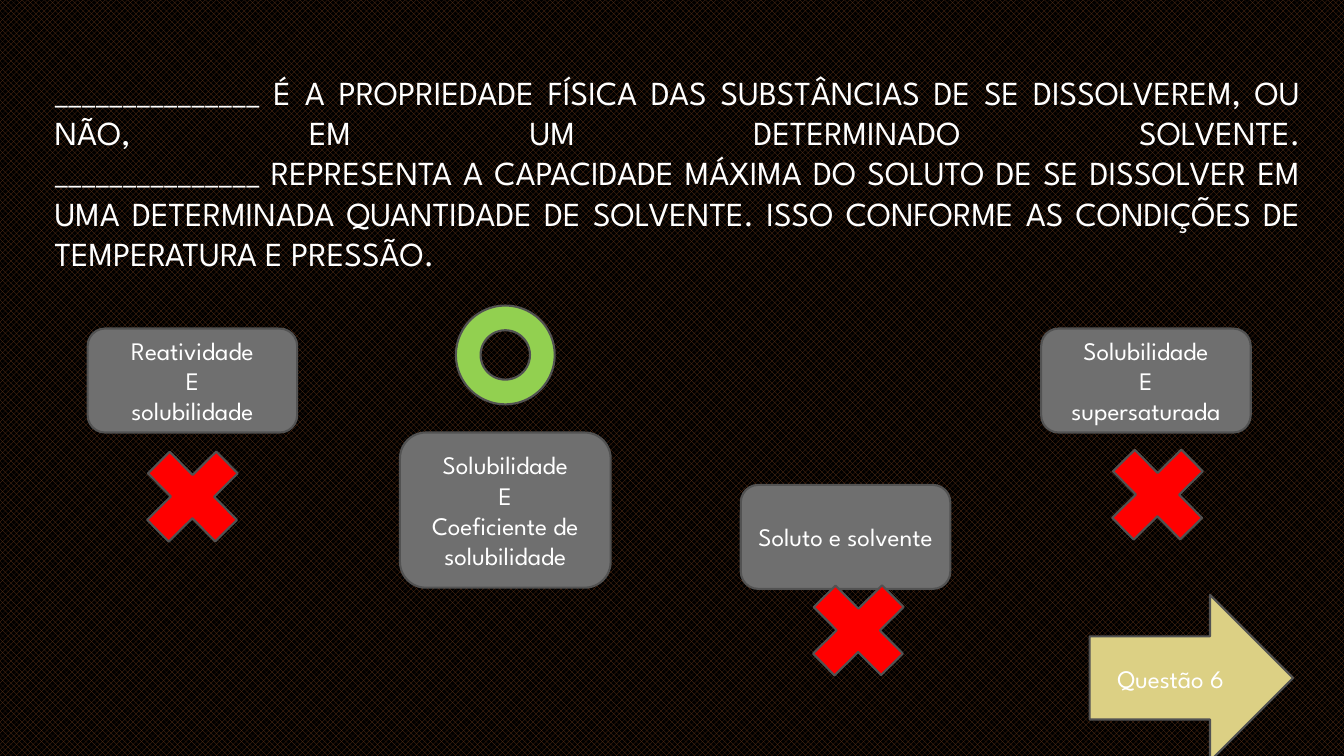
from pptx import Presentation
from pptx.dml.color import RGBColor
from pptx.enum.dml import MSO_PATTERN
from pptx.enum.shapes import MSO_SHAPE as Shape
from pptx.enum.text import MSO_ANCHOR as Anchor, MSO_AUTO_SIZE as AutoSize, PP_ALIGN as Align
from pptx.util import Cm, Pt

FONT = "League Spartan"
WHITE, BLACK, BROWN = "FFFFFF", "000000", "683819"
GRAY, OUTLINE = "6F6F6F", "525252"
GREEN, RED, SAND = "92D050", "FF0000", "DCD084"

# A vertical tab is a line break inside a paragraph
STATEMENT = (
    "_______________ É A PROPRIEDADE FÍSICA DAS SUBSTÂNCIAS DE SE DISSOLVEREM, "
    "OU NÃO, EM UM DETERMINADO SOLVENTE.\v"
    "_______________ REPRESENTA A CAPACIDADE MÁXIMA DO SOLUTO DE SE DISSOLVER EM "
    "UMA DETERMINADA QUANTIDADE DE SOLVENTE. ISSO CONFORME AS CONDIÇÕES DE "
    "TEMPERATURA E PRESSÃO."
)

# Text, box (left, top, width, height), is correct, mark offset (x, y), all in cm
OPTIONS = [
    ("Reatividade\nE\nsolubilidade", (2.21, 8.28, 5.28, 2.62), False, (0, -0.05)),
    ("Solubilidade\nE\nCoeficiente de solubilidade", (10.08, 10.9, 5.31, 3.91), True, (0, -0.71)),
    ("Soluto e solvente", (18.67, 12.22, 5.28, 2.62), False, (0.32, -0.62)),
    ("Solubilidade\nE\nsupersaturada", (26.24, 8.28, 5.28, 2.62), False, (0.29, -0.1)),
]


def rgb(color):
    return RGBColor.from_string(color)


def write(tf, text, size=18, color=WHITE, align=Align.CENTER):
    tf.word_wrap = True
    tf.vertical_anchor = Anchor.MIDDLE
    tf.text = text
    for p in tf.paragraphs:
        p.alignment = align
        for r in p.runs:
            r.font.name = FONT
            r.font.size = Pt(size)
            r.font.color.rgb = rgb(color)


def add_block(slide, kind, box, fill, text=None):
    sp = slide.shapes.add_shape(kind, *map(Cm, box))
    sp.shadow.inherit = False
    sp.fill.solid()
    sp.fill.fore_color.rgb = rgb(fill)
    sp.line.color.rgb = rgb(OUTLINE)
    sp.line.width = Pt(1.5)
    if text:
        write(sp.text_frame, text)
    return sp


def set_background(slide):
    fill = slide.background.fill
    fill.patterned()
    fill.pattern = MSO_PATTERN.SOLID_DIAMOND
    fill.fore_color.rgb = rgb(BROWN)
    fill.back_color.rgb = rgb(BLACK)


def add_statement(slide, box):
    title = slide.shapes.title
    title.left, title.top, title.width, title.height = map(Cm, box)
    write(title.text_frame, STATEMENT, size=24, align=Align.JUSTIFY)
    title.text_frame.auto_size = AutoSize.NONE


def add_option(slide, text, box, correct, offset):
    left, top, width, height = box
    dx, dy = offset
    add_block(slide, Shape.ROUNDED_RECTANGLE, box, GRAY, text)
    center = left + width / 2 + dx
    if correct:
        # Ring above the right answer
        size = 2.49
        ring = (center - size / 2, top - size + dy, size, size)
        add_block(slide, Shape.DONUT, ring, GREEN)
    else:
        # Cross below a wrong answer
        w, h = 3.28, 3.33
        cross = (center - w / 2, top + height + dy, w, h)
        add_block(slide, Shape.MATH_PLUS, cross, RED).rotation = 45.3


def add_next_arrow(slide, box):
    add_block(slide, Shape.RIGHT_ARROW, box, SAND, "Questão 6")


def main():
    prs = Presentation()
    prs.slide_width, prs.slide_height = Cm(33.87), Cm(19.05)
    slide = prs.slides.add_slide(prs.slide_layouts[5])  # title only
    set_background(slide)
    add_statement(slide, (1.12, 1.7, 31.9, 5.28))
    for option in OPTIONS:
        add_option(slide, *option)
    add_next_arrow(slide, (27.46, 14.99, 5.13, 4.19))
    prs.save("out.pptx")


if __name__ == "__main__":
    main()
